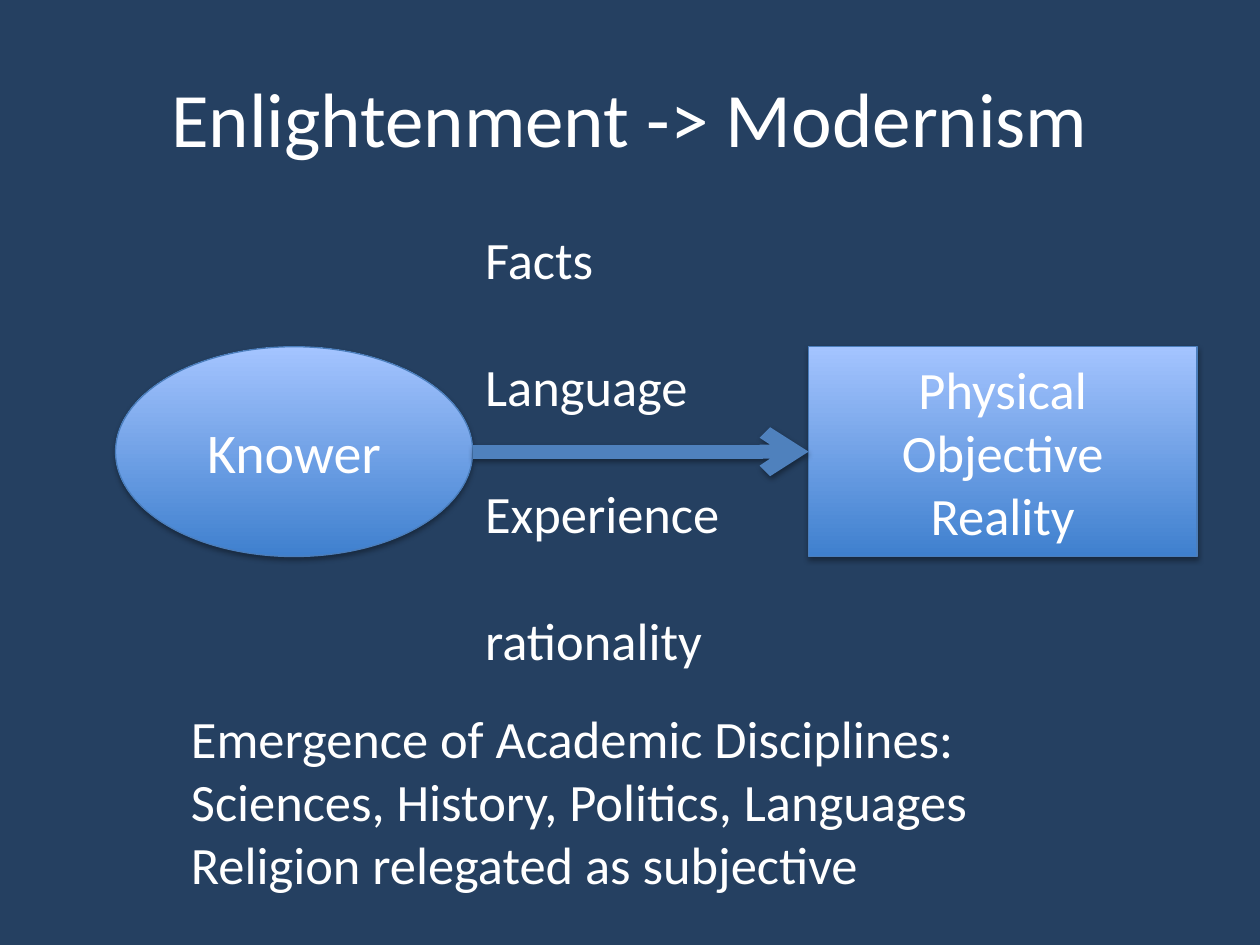
from dataclasses import dataclass

from lxml import etree
from pptx import Presentation
from pptx.dml.color import RGBColor
from pptx.enum.shapes import MSO_CONNECTOR, MSO_SHAPE
from pptx.enum.text import MSO_ANCHOR, PP_ALIGN
from pptx.oxml.ns import qn
from pptx.slide import Slide
from pptx.util import Cm, Pt

ELLIPSE, RECTANGLE = MSO_SHAPE.OVAL, MSO_SHAPE.RECTANGLE
STRAIGHT = MSO_CONNECTOR.STRAIGHT
LEFT, CENTER = PP_ALIGN.LEFT, PP_ALIGN.CENTER
TOP, MIDDLE = MSO_ANCHOR.TOP, MSO_ANCHOR.MIDDLE


@dataclass(frozen=True)
class Theme:
    font: str = "Calibri"
    background: str = "254061"
    text: str = "FFFFFF"
    node_bottom: str = "3F80CE"
    node_top: str = "A4C4FF"
    outline: str = "4B7EBC"
    arrow: str = "4F81BD"
    shadow: str = "000000"
    title_size: float = 44
    knower_size: float = 32
    body_size: float = 30
    blank_line: float = 36.6
    outline_width: float = 0.75
    arrow_width: float = 8


@dataclass(frozen=True)
class Box:
    left: float
    top: float
    width: float
    height: float

    def lengths(self) -> tuple:
        return Cm(self.left), Cm(self.top), Cm(self.width), Cm(self.height)


@dataclass(frozen=True)
class Node:
    kind: MSO_SHAPE
    box: Box
    lines: tuple
    size: float


@dataclass(frozen=True)
class Note:
    box: Box
    lines: tuple
    gap: float = 0


THEME = Theme()
TITLE = "Enlightenment -> Modernism"
TITLE_BOX = Box(1.27, 0.76, 22.86, 3.18)
KNOWER = Node(ELLIPSE, Box(2.33, 6.99, 7.2, 4.23), ("Knower",), THEME.knower_size)
REALITY = Node(RECTANGLE, Box(16.3, 6.99, 7.83, 4.23),
               ("Physical", "Objective", "Reality"), THEME.body_size)
NOTES = (
    Note(Box(9.53, 4.45, 5.72, 9.25),
         ("Facts", "Language", "Experience", "rationality"), THEME.blank_line),
    Note(Box(3.6, 14.1, 19.48, 4.11),
         ("Emergence of Academic Disciplines:",
          "Sciences, History, Politics, Languages",
          "Religion relegated as subjective")),
)


def rgb(value: str) -> RGBColor:
    return RGBColor.from_string(value)


def write_lines(tf, lines: tuple, size: float, align=LEFT, anchor=TOP,
                gap: float = 0) -> None:
    tf.word_wrap = True
    tf.vertical_anchor = anchor
    for i, line in enumerate(lines):
        p = tf.add_paragraph() if i else tf.paragraphs[0]
        p.alignment = align
        if i and gap:
            p.space_before = Pt(gap)
        r = p.add_run()
        r.text = line
        r.font.name = THEME.font
        r.font.size = Pt(size)
        r.font.color.rgb = rgb(THEME.text)


def add_shadow(effects, distance: float, opacity: int) -> None:
    shadow = etree.SubElement(effects, qn("a:outerShdw"), blurRad="40000",
                              dist=str(Pt(distance)), dir="5400000", rotWithShape="0")
    color = etree.SubElement(shadow, qn("a:srgbClr"), val=THEME.shadow)
    etree.SubElement(color, qn("a:alpha"), val=str(opacity * 1000))


def add_node(s: Slide, node: Node):
    sp = s.shapes.add_shape(node.kind, *node.box.lengths())
    sp.fill.gradient()
    sp.fill.gradient_angle = 90
    for stop, color in zip(sp.fill.gradient_stops, (THEME.node_bottom, THEME.node_top)):
        stop.color.rgb = rgb(color)
    sp.line.color.rgb = rgb(THEME.outline)
    sp.line.width = Pt(THEME.outline_width)
    sp.shadow.inherit = False
    add_shadow(sp.element.spPr.find(qn("a:effectLst")), 1.8, 35)
    write_lines(sp.text_frame, node.lines, node.size, CENTER, MIDDLE)
    return sp


def add_arrow(s: Slide, source, target) -> None:
    y = source.top + source.height // 2
    cxn = s.shapes.add_connector(STRAIGHT, source.left + source.width, y, target.left, y)
    cxn.line.color.rgb = rgb(THEME.arrow)
    cxn.line.width = Pt(THEME.arrow_width)
    spPr = cxn.element.spPr
    etree.SubElement(spPr.find(qn("a:ln")), qn("a:tailEnd"), type="arrow")
    add_shadow(etree.SubElement(spPr, qn("a:effectLst")), 1.6, 38)


def add_note(s: Slide, note: Note) -> None:
    sp = s.shapes.add_textbox(*note.box.lengths())
    write_lines(sp.text_frame, note.lines, THEME.body_size, gap=note.gap)


def main() -> None:
    prs = Presentation()
    prs.slide_width, prs.slide_height = Cm(25.4), Cm(19.05)
    s = prs.slides.add_slide(prs.slide_layouts.get_by_name("Title Only"))
    s.background.fill.solid()
    s.background.fill.fore_color.rgb = rgb(THEME.background)

    title = s.shapes.title
    title.left, title.top, title.width, title.height = TITLE_BOX.lengths()
    write_lines(title.text_frame, (TITLE,), THEME.title_size, CENTER, MIDDLE)

    knower, reality = (add_node(s, node) for node in (KNOWER, REALITY))
    add_arrow(s, knower, reality)
    for note in NOTES:
        add_note(s, note)
    prs.save("out.pptx")


if __name__ == "__main__":
    main()
